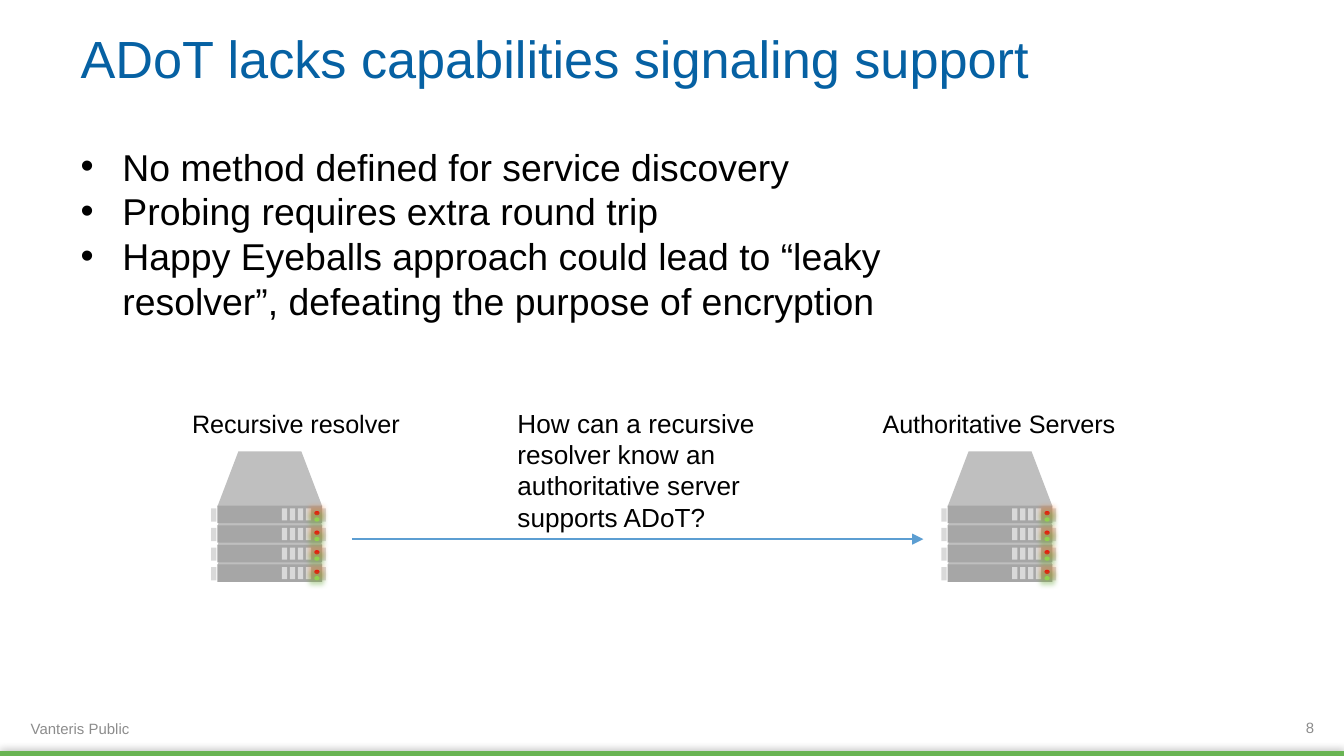
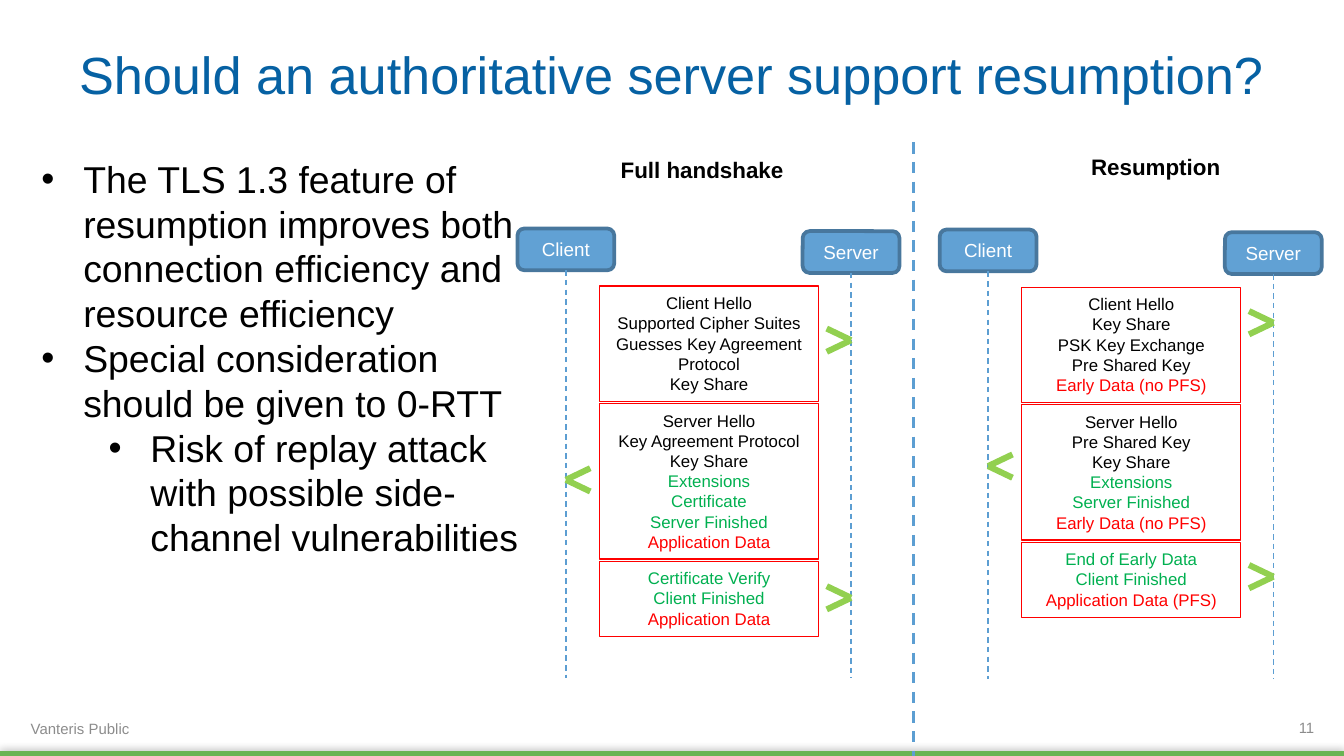
from math import ceil

from lxml.etree import SubElement
from pptx import Presentation
from pptx.dml.color import RGBColor
from pptx.enum.dml import MSO_LINE
from pptx.enum.shapes import MSO_CONNECTOR, MSO_SHAPE
from pptx.enum.text import MSO_ANCHOR, MSO_AUTO_SIZE, PP_ALIGN
from pptx.oxml.ns import qn
from pptx.util import Cm, Pt

COLORS = {
    "title": "0661A3", "black": "000000", "white": "FFFFFF", "footer": "8C8C8C",
    "band": "69B453", "line": "5C9ED2", "node": "61A1D4", "node_edge": "48779D",
    "red": "FF0000", "green": "00B050", "chevron": "92D050",
    "slot": "D9D9D9", "lid": "BFBFBF", "bar": "A6A6A6",
    "red_glow": "ED7D31", "green_glow": "70AD47",
}
FONT = "Arial"
WIDTH, HEIGHT = 25.4, 14.29
FOOTER = "Vanteris Public"

SIGNALING = {
    "title": "ADoT lacks capabilities signaling support",
    "title_at": (1.27, 0.51, 22.86, 1.17),
    "bullets": [
        (0, "No method defined for service discovery"),
        (0, "Probing requires extra round trip"),
        (0, "Happy Eyeballs approach could lead to “leaky resolver”, "
            "defeating the purpose of encryption"),
    ],
    "bullets_at": (1.27, 2.59, 16.92, 4.45),
    "number": "8",
}
CAPTIONS = [
    ("Recursive resolver", 13.5, (3.38, 7.59, 4.7, 0.84)),
    ("Authoritative Servers", 13.5, (16.43, 7.59, 4.95, 0.84)),
    ("How can a recursive resolver know an authoritative server supports ADoT?",
     14, (9.53, 7.57, 5.84, 2.64)),
]
SERVER_STACKS = [4.11, 17.91]
STACK_BOTTOM, UNIT_PITCH, UNITS = 10.67, 0.37, 4
QUERY_ARROW = (6.65, 10.19, 17.45, 10.19)

RESUMPTION = {
    "title": "Should an authoritative server support resumption?",
    "title_at": (1.24, 0, 23.39, 2.77),
    "bullets": [
        (0, "The TLS 1.3 feature of resumption improves both connection "
            "efficiency and resource efficiency"),
        (0, "Special consideration should be given to 0-RTT"),
        (1, "Risk of replay attack with possible side-channel vulnerabilities"),
    ],
    "bullets_at": (0.53, 2.82, 9.78, 7.95),
    "number": "11",
}
DIVIDER = (17.27, 2.69, 17.27, HEIGHT)
HANDSHAKES = [
    {
        "heading": "Full handshake", "heading_at": (11.48, 2.82, 3.84, 0.76),
        "corner": (9.78, 4.32),
        "messages": [
            ("server", 6.43, {"black": ["Client Hello", "Supported Cipher Suites",
                                        "Guesses Key Agreement Protocol", "Key Share"]}),
            ("client", 9.07, {"black": ["Server Hello", "Key Agreement Protocol", "Key Share"],
                              "green": ["Extensions", "Certificate", "Server Finished"],
                              "red": ["Application Data"]}),
            ("server", 11.3, {"green": ["Certificate Verify", "Client Finished"],
                              "red": ["Application Data"]}),
        ],
    },
    {
        "heading": "Resumption", "heading_at": (20.37, 2.77, 3.07, 0.76),
        "corner": (17.76, 4.34),
        "messages": [
            ("server", 6.1, {"black": ["Client Hello", "Key Share", "PSK Key Exchange",
                                       "Pre Shared Key"],
                             "red": ["Early Data (no PFS)"]}),
            ("client", 8.81, {"black": ["Server Hello", "Pre Shared Key", "Key Share"],
                              "green": ["Extensions", "Server Finished"],
                              "red": ["Early Data (no PFS)"]}),
            ("server", 10.9, {"green": ["End of Early Data", "Client Finished"],
                              "red": ["Application Data (PFS)"]}),
        ],
    },
]
NODE_WIDTH, NODE_HEIGHT, SERVER_OFFSET, SERVER_DROP = 1.83, 0.79, 5.39, 0.05
MESSAGE_WIDTH, MESSAGE_GAP, ROW_CHARS = 4.14, 0.04, 25


def rgb(name):
    return RGBColor.from_string(COLORS[name])


def place(part, at):
    part.left, part.top, part.width, part.height = map(Cm, at)


def write(part, text, size=20, color="black", bold=False, align=PP_ALIGN.LEFT,
          anchor=MSO_ANCHOR.TOP):
    frame = part.text_frame
    frame.word_wrap = True
    frame.auto_size = MSO_AUTO_SIZE.NONE
    frame.vertical_anchor = anchor
    lines = [(0, text, color)] if isinstance(text, str) else text
    for index, (level, line, line_color) in enumerate(lines):
        paragraph = frame.paragraphs[0] if index == 0 else frame.add_paragraph()
        paragraph.level = level or 0
        paragraph.alignment = align
        paragraph.space_before = Pt(0)
        run = paragraph.add_run()
        run.text = line
        run.font.name, run.font.size, run.font.bold = FONT, Pt(size), bold
        run.font.color.rgb = rgb(line_color)


def add_text(slide, at, text, **style):
    box = slide.shapes.add_textbox(*map(Cm, at))
    write(box, text, **style)


def add_block(shapes, kind, at, fill=None, line=None, width=0.75):
    block = shapes.add_shape(kind, *map(Cm, at))
    block.shadow.inherit = False
    if fill:
        block.fill.solid()
        block.fill.fore_color.rgb = rgb(fill)
    else:
        block.fill.background()
    if line:
        block.line.color.rgb = rgb(line)
        block.line.width = Pt(width)
    else:
        block.line.fill.background()
    return block


def add_effect(block, kind, color, alpha, **settings):
    effects = block._element.spPr.find(qn("a:effectLst"))
    effect = SubElement(effects, qn("a:" + kind), **settings)
    tint = SubElement(effect, qn("a:srgbClr"), val=COLORS[color])
    SubElement(tint, qn("a:alpha"), val=str(alpha * 1000))


def add_line(shapes, ends, color="line", width=0.75, dashed=False, arrow=False):
    line = shapes.add_connector(MSO_CONNECTOR.STRAIGHT, *map(Cm, ends))
    line.line.color.rgb = rgb(color)
    line.line.width = Pt(width)
    if dashed:
        line.line.dash_style = MSO_LINE.DASH
    if arrow:
        SubElement(line.line._get_or_add_ln(), qn("a:tailEnd"), type="triangle")
    SubElement(line._element.spPr, qn("a:effectLst"))


def add_bullets(body, bullets):
    write(body, [(level, text, "black") for level, text in bullets])
    for paragraph, (level, _) in zip(body.text_frame.paragraphs, bullets):
        properties = paragraph._p.get_or_add_pPr()
        properties.set("marL", str(Cm(0.79 + 1.27 * level)))
        properties.set("indent", str(Cm(-0.79)))
        SubElement(properties, qn("a:buFont"), typeface=FONT)
        SubElement(properties, qn("a:buChar"), char="•")


def add_page(deck, content):
    slide = deck.slides.add_slide(deck.slide_layouts[1])
    band = add_block(slide.shapes, MSO_SHAPE.RECTANGLE, (0, 14.2, WIDTH, 0.1), "band")
    add_effect(band, "outerShdw", "black", 40, blurRad=str(Pt(5)))
    add_text(slide, (0.33, 13.59, 8.43, 0.38), FOOTER, size=8, color="footer",
             anchor=MSO_ANCHOR.MIDDLE)
    add_text(slide, (24.1, 13.61, 0.99, 0.3), content["number"], size=8, color="footer",
             align=PP_ALIGN.RIGHT, anchor=MSO_ANCHOR.MIDDLE)
    title, body = slide.placeholders
    place(title, content["title_at"])
    write(title, content["title"], size=28, color="title", anchor=MSO_ANCHOR.MIDDLE)
    place(body, content["bullets_at"])
    add_bullets(body, content["bullets"])
    return slide


def add_server_stack(slide, left):
    stack = slide.shapes.add_group_shape().shapes
    for unit in range(UNITS):
        top = STACK_BOTTOM - unit * UNIT_PITCH
        for ear in (1.95, -0.12):
            add_block(stack, MSO_SHAPE.RECTANGLE, (left + ear, top + 0.05, 0.1, 0.25), "slot")
        lid = add_block(stack, MSO_SHAPE.FLOWCHART_MANUAL_OPERATION,
                        (left, top - 1.03, 1.98, 1.04), "lid")
        lid.rotation = 180
        add_block(stack, MSO_SHAPE.RECTANGLE, (left, top, 1.98, 0.33), "bar")
        for slot in range(4):
            add_block(stack, MSO_SHAPE.RECTANGLE,
                      (left + 1.22 + 0.15 * slot, top + 0.05, 0.1, 0.23), "slot")
        for drop, light, glow in ((0.1, "red", "red_glow"), (0.22, "chevron", "green_glow")):
            lamp = add_block(stack, MSO_SHAPE.OVAL,
                             (left + 1.83, top + drop, 0.1, 0.08), light)
            add_effect(lamp, "glow", glow, 40, rad=str(Pt(5)))


def add_chevron(slide, tip, middle, direction):
    back = tip - 0.46 if direction == "server" else tip + 0.46
    halves = slide.shapes.add_group_shape().shapes
    for spread in (0.22, -0.22):
        add_line(halves, (back, middle + spread, tip, middle), "chevron", 3.25)


def add_handshake(slide, handshake):
    left, top = handshake["corner"]
    add_text(slide, handshake["heading_at"], handshake["heading"], size=12, bold=True)
    lifelines = {}
    for label, x, y in (("Client", left, top),
                        ("Server", left + SERVER_OFFSET, top + SERVER_DROP)):
        node = add_block(slide.shapes, MSO_SHAPE.ROUNDED_RECTANGLE,
                         (x, y, NODE_WIDTH, NODE_HEIGHT), "node", "node_edge", 2)
        write(node, label, size=10.1, color="white", align=PP_ALIGN.CENTER,
              anchor=MSO_ANCHOR.MIDDLE)
        axis = x + NODE_WIDTH / 2
        lifelines[label.lower()] = axis
        add_line(slide.shapes, (axis, y + NODE_HEIGHT, axis, top + 8.5), dashed=True)
    message_top = top + 1.09
    for receiver, middle, fields in handshake["messages"]:
        lines = [(0, field, color) for color, group in fields.items() for field in group]
        rows = sum(ceil(len(field) / ROW_CHARS) for _, field, _ in lines)
        height = 0.28 + 0.38 * rows
        message = add_block(slide.shapes, MSO_SHAPE.RECTANGLE,
                            (left + 1.55, message_top, MESSAGE_WIDTH, height),
                            "white" if receiver == "client" else None, "red")
        write(message, lines, size=9, align=PP_ALIGN.CENTER)
        add_chevron(slide, lifelines[receiver], middle, receiver)
        message_top += height + MESSAGE_GAP


def main():
    deck = Presentation()
    deck.slide_width, deck.slide_height = Cm(WIDTH), Cm(HEIGHT)
    signaling = add_page(deck, SIGNALING)
    for caption, size, at in CAPTIONS:
        add_text(signaling, at, caption, size=size)
    for left in SERVER_STACKS:
        add_server_stack(signaling, left)
    add_line(signaling.shapes, QUERY_ARROW, arrow=True)

    resumption = add_page(deck, RESUMPTION)
    add_line(resumption.shapes, DIVIDER, width=1.5, dashed=True)
    for handshake in HANDSHAKES:
        add_handshake(resumption, handshake)
    deck.save("out.pptx")


if __name__ == "__main__":
    main()
